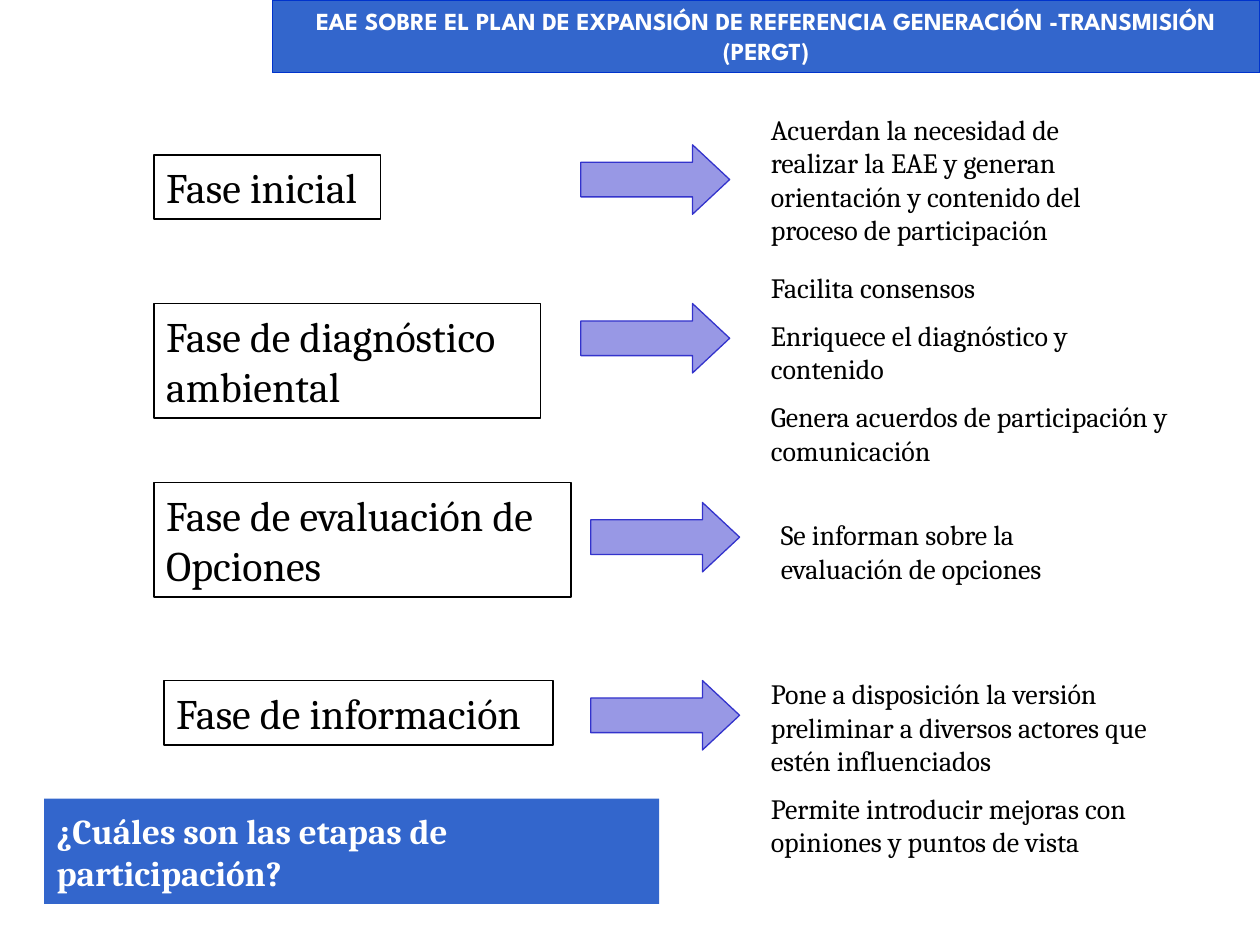
from dataclasses import dataclass

from lxml.etree import SubElement
from pptx import Presentation
from pptx.dml.color import RGBColor
from pptx.enum.shapes import MSO_SHAPE
from pptx.enum.text import MSO_ANCHOR, MSO_AUTO_SIZE, PP_ALIGN
from pptx.oxml.ns import qn
from pptx.util import Cm, Pt


@dataclass(frozen=True)
class Theme:
    blue: RGBColor = RGBColor(0x33, 0x66, 0xCC)
    banner_line: RGBColor = RGBColor(0x00, 0x33, 0xCC)
    arrow: RGBColor = RGBColor(0x33, 0x33, 0xCC)
    black: RGBColor = RGBColor(0, 0, 0)
    white: RGBColor = RGBColor(0xFF, 0xFF, 0xFF)
    body_font: str = "Cambria"
    banner_font: str = "League Spartan"
    banner_size: Pt = Pt(14)
    title_size: Pt = Pt(20)
    phase_size: Pt = Pt(24)
    note_size: Pt = Pt(16)
    note_gap: Pt = Pt(8)


THEME = Theme()
ARROW_SIZE = 3, 1.4

# Phase lines, phase box, arrow corner, notes, notes box; lengths in cm
PHASES = [
    (["Fase inicial"], (3.1, 3.12, 4.57, 1.3), (11.71, 2.92),
     ["Acuerdan la necesidad de realizar la EAE y generan orientación y "
      "contenido del proceso de participación"],
     (15.29, 2.13, 8.2, 2.97)),
    (["Fase de diagnóstico", "ambiental"], (3.1, 6.12, 7.8, 2.31), (11.71, 6.12),
     ["Facilita consensos",
      "Enriquece el diagnóstico y contenido",
      "Genera acuerdos de participación y comunicación"],
     (15.29, 5.33, 8.79, 4.32)),
    (["Fase de evaluación de", "Opciones"], (3.1, 9.73, 8.41, 2.31), (11.91, 10.13),
     ["Se informan sobre la evaluación de opciones"],
     (15.49, 10.31, 6.81, 1.63)),
    (["Fase de información"], (3.3, 13.72, 7.85, 1.3), (11.91, 13.72),
     ["Pone a disposición la versión preliminar a diversos actores que "
      "estén influenciados",
      "Permite introducir mejoras con opiniones y puntos de vista"],
     (15.29, 13.51, 9.19, 3.99)),
]


def cm(values):
    return [Cm(v) for v in values]


def write(sp, lines, size, color, font=THEME.body_font, bold=False,
          align=PP_ALIGN.LEFT, anchor=MSO_ANCHOR.TOP, wrap=True, gap=Pt(0)):
    """Fill a shape with one paragraph per line, spaced by gap."""
    tf = sp.text_frame
    tf.word_wrap = wrap
    tf.auto_size = MSO_AUTO_SIZE.SHAPE_TO_FIT_TEXT
    tf.vertical_anchor = anchor
    tf.margin_left = tf.margin_right = Cm(0.25)
    tf.margin_top = tf.margin_bottom = Cm(0.13)
    for i, line in enumerate(lines):
        p = tf.add_paragraph() if i else tf.paragraphs[0]
        p.text = line
        p.alignment = align
        p.space_before = gap if i else Pt(0)
        p.font.name, p.font.size, p.font.bold = font, size, bold
        p.font.color.rgb = color


def add_shape(slide, kind, box, fill, line, width):
    sp = slide.shapes.add_shape(kind, *cm(box))
    sp.shadow.inherit = False
    if fill is None:
        sp.fill.background()
    else:
        sp.fill.solid()
        sp.fill.fore_color.rgb = fill
    sp.line.color.rgb = line
    sp.line.width = Pt(width)
    return sp


def add_banner(slide, text):
    sp = add_shape(slide, MSO_SHAPE.RECTANGLE, (5.49, 0, 19.91, 1.47),
                   THEME.blue, THEME.banner_line, 0.75)
    write(sp, [text], THEME.banner_size, THEME.white, THEME.banner_font,
          bold=True, align=PP_ALIGN.CENTER)


def set_title(slide, text):
    sp = slide.shapes.title
    sp.left, sp.top, sp.width, sp.height = cm((0.89, 16.18, 12.4, 1.96))
    sp.fill.solid()
    sp.fill.fore_color.rgb = THEME.blue
    write(sp, [text], THEME.title_size, THEME.white, bold=True,
          anchor=MSO_ANCHOR.MIDDLE)


def add_phase_box(slide, lines, box):
    sp = add_shape(slide, MSO_SHAPE.RECTANGLE, box, None, THEME.black, 1)
    write(sp, lines, THEME.phase_size, THEME.black, wrap=False)


def add_arrow(slide, corner):
    """Add a half-transparent arrow pointing right."""
    sp = add_shape(slide, MSO_SHAPE.RIGHT_ARROW, (*corner, *ARROW_SIZE),
                   THEME.arrow, THEME.arrow, 0.75)
    sp.adjustments[0], sp.adjustments[1] = 0.5, 0.535
    color = sp.fill._xPr.find(qn("a:solidFill"))[0]
    SubElement(color, qn("a:alpha"), val="50000")


def add_notes(slide, lines, box):
    sp = slide.shapes.add_textbox(*cm(box))
    write(sp, lines, THEME.note_size, THEME.black, gap=THEME.note_gap)


def main():
    prs = Presentation()
    prs.slide_width, prs.slide_height = Cm(25.4), Cm(19.05)
    slide = prs.slides.add_slide(prs.slide_layouts.get_by_name("Title Only"))
    add_banner(slide, "EAE SOBRE EL PLAN DE EXPANSIÓN DE REFERENCIA "
                      "GENERACIÓN -TRANSMISIÓN (PERGT)")
    set_title(slide, "¿Cuáles son las etapas de participación?")
    for phase, phase_box, corner, notes, notes_box in PHASES:
        add_phase_box(slide, phase, phase_box)
        add_arrow(slide, corner)
        add_notes(slide, notes, notes_box)
    prs.save("out.pptx")


if __name__ == "__main__":
    main()
